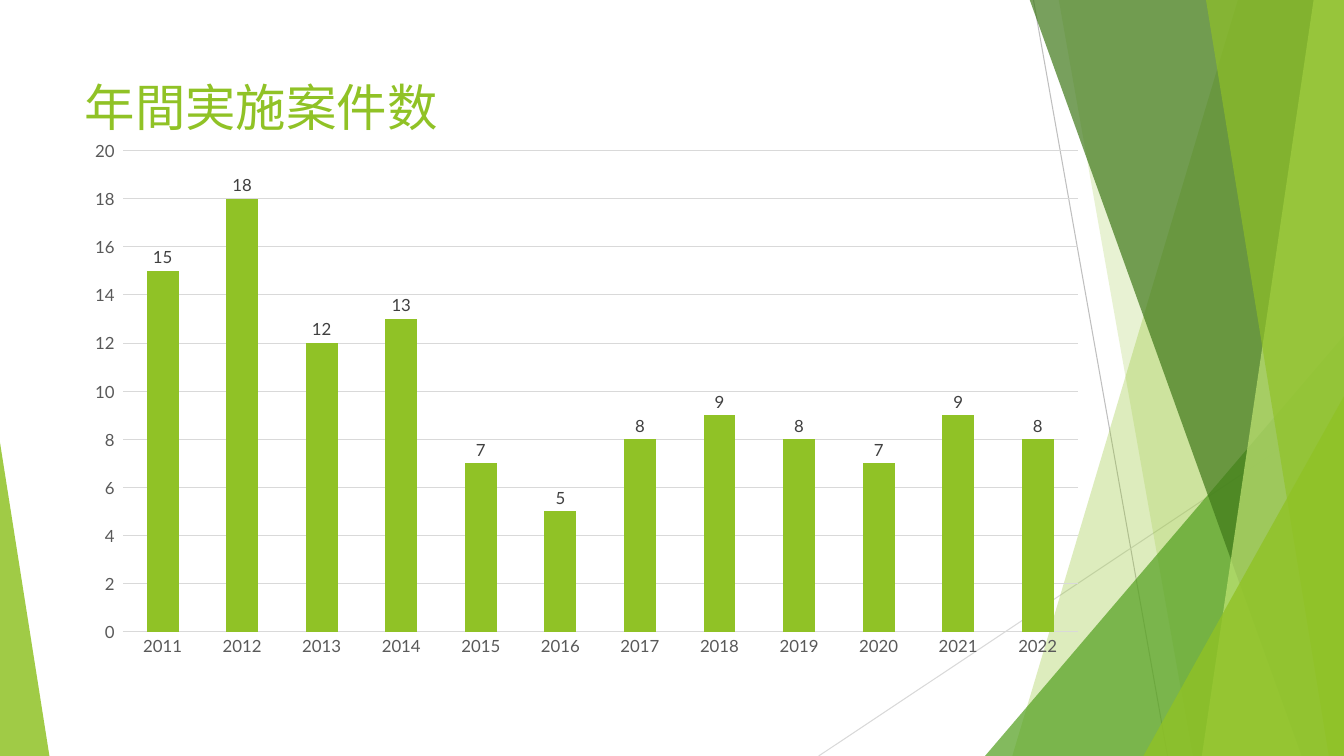
from lxml.etree import SubElement
from pptx import Presentation
from pptx.chart.data import CategoryChartData
from pptx.dml.color import RGBColor
from pptx.enum.chart import XL_CHART_TYPE, XL_LABEL_POSITION, XL_TICK_MARK
from pptx.enum.shapes import MSO_CONNECTOR, MSO_SHAPE
from pptx.enum.text import MSO_ANCHOR, MSO_AUTO_SIZE, PP_ALIGN
from pptx.oxml.ns import qn
from pptx.util import Inches, Pt

WIDTH, HEIGHT, TOP = 13.33, 7.5, -0.01
FONT = "Lato"
GREEN, GRID, AXIS_TEXT, LABEL_TEXT = "90C226", "D9D9D9", "595959", "404040"

HEADING = "年間実施案件数"
HEADING_BOX = (0.74, 0.67, 9.4, 0.77)
CHART_BOX = (0.74, 1.29, 10.15, 5.32)
FIRST_YEAR = 2011
CASES = [15, 18, 12, 13, 7, 5, 8, 9, 8, 7, 9, 8]

RAYS = [
    ((10.25, 0), (11.58, HEIGHT), "BFBFBF"),
    ((WIDTH, 4.03), (8.12, HEIGHT), GRID),
]
FACETS = [
    ("band", 12.28, 10.04, GREEN, 30),
    ("band", 10.5, 11.83, GREEN, 20),
    ("wedge", (9.77, 3.33, 3.56, 4.17), 1, "54A021", 72),
    ("band", 10.21, 12.91, "3F7819", 70),
    ("band", 13.03, 11.92, "C0E474", 70),
    ("band", 11.96, 13.18, GREEN, 65),
    ("wedge", (11.34, 3.93, 1.99, 3.57), 1, GREEN, 80),
    ("wedge", (0, 4.39, 0.49, 3.11), 0, GREEN, 85),
]


def rgb(color):
    return RGBColor.from_string(color)


def inches(lengths):
    return [Inches(length) for length in lengths]


def apply(target, formats):
    for name, value in formats.items():
        setattr(target, name, value)


def style_font(font, size, color):
    apply(font, {"size": Pt(size), "name": FONT, "bold": False})
    font.color.rgb = rgb(color)


def style_line(line, color):
    line.color.rgb = rgb(color)
    line.width = Pt(0.75)


def add_ray(slide, start, end, color):
    ray = slide.shapes.add_connector(MSO_CONNECTOR.STRAIGHT, *inches(start + end))
    style_line(ray.line, color)
    SubElement(ray._element.spPr, qn("a:effectLst"))


def add_band(slide, top_x, bottom_x):
    corners = [(WIDTH, TOP), (WIDTH, HEIGHT), (bottom_x, HEIGHT)]
    builder = slide.shapes.build_freeform(*inches((top_x, TOP)))
    builder.add_line_segments([inches(corner) for corner in corners], close=True)
    return builder.convert_to_shape()


def add_wedge(slide, box, apex):
    wedge = slide.shapes.add_shape(MSO_SHAPE.ISOSCELES_TRIANGLE, *inches(box))
    wedge.adjustments[0] = apex
    return wedge


def add_facet(slide, kind, first, second, color, opacity):
    facet = {"band": add_band, "wedge": add_wedge}[kind](slide, first, second)
    facet.shadow.inherit = False
    facet.line.fill.background()
    facet.fill.solid()
    facet.fill.fore_color.rgb = rgb(color)
    tone = facet._element.spPr.find(qn("a:solidFill"))[0]
    SubElement(tone, qn("a:alpha")).set("val", str(opacity * 1000))


def add_heading(slide):
    heading = slide.shapes.title
    apply(heading, dict(zip(("left", "top", "width", "height"), inches(HEADING_BOX))))
    frame = heading.text_frame
    frame.text = HEADING
    apply(frame, {"word_wrap": True, "auto_size": MSO_AUTO_SIZE.NONE,
                  "vertical_anchor": MSO_ANCHOR.MIDDLE})
    frame.paragraphs[0].alignment = PP_ALIGN.LEFT
    style_font(frame.paragraphs[0].runs[0].font, 36, GREEN)
    slide.shapes._spTree.append(heading._element)


def add_cases_chart(slide):
    data = CategoryChartData()
    data.categories = [str(FIRST_YEAR + i) for i in range(len(CASES))]
    data.add_series("Series 1", CASES)
    chart = slide.shapes.add_chart(
        XL_CHART_TYPE.COLUMN_CLUSTERED, *inches(CHART_BOX), data).chart
    apply(chart, {"has_title": False, "has_legend": False})
    style_font(chart.font, 10, "000000")

    years, counts = chart.category_axis, chart.value_axis
    for axis in (years, counts):
        apply(axis, {"major_tick_mark": XL_TICK_MARK.NONE,
                     "minor_tick_mark": XL_TICK_MARK.NONE})
        style_font(axis.tick_labels.font, 12, AXIS_TEXT)
    style_line(years.format.line, GRID)
    counts.format.line.fill.background()
    apply(counts, {"minimum_scale": 0, "maximum_scale": 20, "major_unit": 2,
                   "has_major_gridlines": True})
    style_line(counts.major_gridlines.format.line, GRID)
    apply(counts.tick_labels, {"number_format": r"#,##0_);[Red]\(#,##0\)",
                               "number_format_is_linked": False})

    plot = chart.plots[0]
    apply(plot, {"gap_width": 150, "vary_by_categories": False,
                 "has_data_labels": True})
    apply(plot.data_labels, {"show_value": True,
                             "position": XL_LABEL_POSITION.OUTSIDE_END})
    style_font(plot.data_labels.font, 12, LABEL_TEXT)
    columns = plot.series[0].format.fill
    columns.solid()
    columns.fore_color.rgb = rgb(GREEN)


def main():
    deck = Presentation()
    apply(deck, {"slide_width": Inches(WIDTH), "slide_height": Inches(HEIGHT)})
    slide = deck.slides.add_slide(deck.slide_layouts[5])
    for ray in RAYS:
        add_ray(slide, *ray)
    for facet in FACETS:
        add_facet(slide, *facet)
    add_heading(slide)
    add_cases_chart(slide)
    deck.save("out.pptx")


if __name__ == "__main__":
    main()
